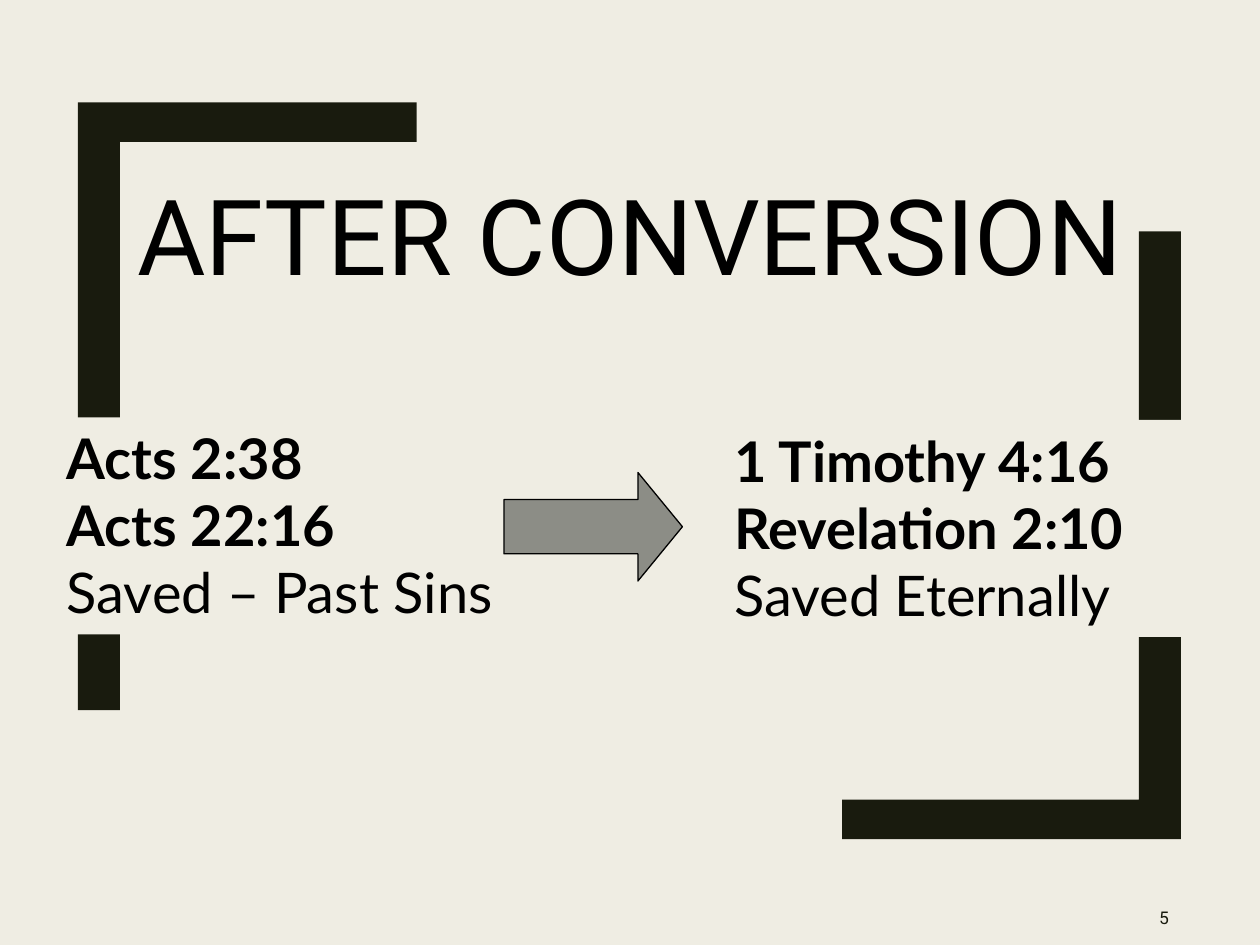
"""Builds the "After Conversion" slide: two verse panels joined by an arrow inside corner brackets."""
from pptx import Presentation
from pptx.dml.color import RGBColor
from pptx.enum.shapes import MSO_SHAPE
from pptx.enum.text import MSO_ANCHOR, MSO_AUTO_SIZE, PP_ALIGN
from pptx.util import Pt

RECTANGLE, RIGHT_ARROW = MSO_SHAPE.RECTANGLE, MSO_SHAPE.RIGHT_ARROW
TOP, MIDDLE, BOTTOM = MSO_ANCHOR.TOP, MSO_ANCHOR.MIDDLE, MSO_ANCHOR.BOTTOM
LEFT, CENTER, RIGHT = PP_ALIGN.LEFT, PP_ALIGN.CENTER, PP_ALIGN.RIGHT
FIT_SHAPE = MSO_AUTO_SIZE.SHAPE_TO_FIT_TEXT
TITLE_ONLY = 5

COLORS = {"paper": "EFEDE3", "bracket": "191B0E", "text": "000000", "arrow": "8C8D86"}

TITLE = "AFTER CONVERSION"
PAGE_NUMBER = "5"
PANELS = [
    ((31, 238.5, 288, 124), ["Acts 2:38", "Acts 22:16", "Saved – Past Sins"]),
    ((412.5, 240, 276, 124), ["1 Timothy 4:16", "Revelation 2:10", "Saved Eternally"]),
]
BRACKET_CORNERS = [(674.8, 479.5, -1), (44.6, 58.5, 1)]
ARM, STEM, ARM_THICKNESS, STEM_THICKNESS = 193.5, 347.3, 22.6, 24


def color(name):
    return RGBColor.from_string(COLORS[name])


def place(shape, left, top, width, height):
    shape.left, shape.top, shape.width, shape.height = map(Pt, (left, top, width, height))


def paint(shape, fill, line=None):
    shape.shadow.inherit = False
    shape.fill.solid()
    shape.fill.fore_color.rgb = color(fill)
    if line:
        shape.line.color.rgb = color(line)
        shape.line.width = Pt(0.75)
    else:
        shape.line.fill.background()


def write(shape, lines, font="Lato", size=32, ink="text", align=LEFT, anchor=TOP,
          bold_lines=0, spacing=1.0, fit=MSO_AUTO_SIZE.NONE):
    frame = shape.text_frame
    frame.text = "\n".join(lines)
    frame.word_wrap = True
    frame.auto_size = fit
    frame.vertical_anchor = anchor
    for index, paragraph in enumerate(frame.paragraphs):
        paragraph.alignment = align
        paragraph.line_spacing = spacing
        run_font = paragraph.runs[0].font
        run_font.name, run_font.size = font, Pt(size)
        run_font.bold = index < bold_lines
        run_font.color.rgb = color(ink)


def add_bracket(shapes, x, y, direction):
    outline = [(0, 0), (ARM, 0), (ARM, ARM_THICKNESS), (STEM_THICKNESS, ARM_THICKNESS),
               (STEM_THICKNESS, STEM), (0, STEM)]
    points = [(Pt(x + direction * dx), Pt(y + direction * dy)) for dx, dy in outline]
    builder = shapes.build_freeform(*points[0])
    builder.add_line_segments(points[1:], close=True)
    paint(builder.convert_to_shape(), "bracket")


def main():
    deck = Presentation()
    deck.slide_width, deck.slide_height = Pt(720), Pt(540)
    slide = deck.slides.add_slide(deck.slide_layouts[TITLE_ONLY])
    shapes = slide.shapes
    slide.background.fill.solid()
    slide.background.fill.fore_color.rgb = color("paper")

    for corner in BRACKET_CORNERS:
        add_bracket(shapes, *corner)

    title = shapes.title
    shapes._spTree.append(title._element)
    place(title, 54, 102, 612, 72)
    write(title, [TITLE], font="Roboto", size=60, align=CENTER, anchor=BOTTOM, spacing=0.89)

    number = shapes.add_textbox(Pt(580.5), Pt(508.5), Pt(94.5), Pt(31.5))
    write(number, [PAGE_NUMBER], font="Roboto", size=10, ink="bracket", align=RIGHT, anchor=MIDDLE)

    for box, lines in PANELS:
        panel = shapes.add_shape(RECTANGLE, *map(Pt, box))
        paint(panel, "paper")
        write(panel, lines, bold_lines=2, fit=FIT_SHAPE)

    arrow = shapes.add_shape(RIGHT_ARROW, Pt(288), Pt(270), Pt(102), Pt(62))
    arrow.adjustments[0], arrow.adjustments[1] = 0.5, 0.41
    paint(arrow, "arrow", line="text")

    deck.save("out.pptx")


if __name__ == "__main__":
    main()
